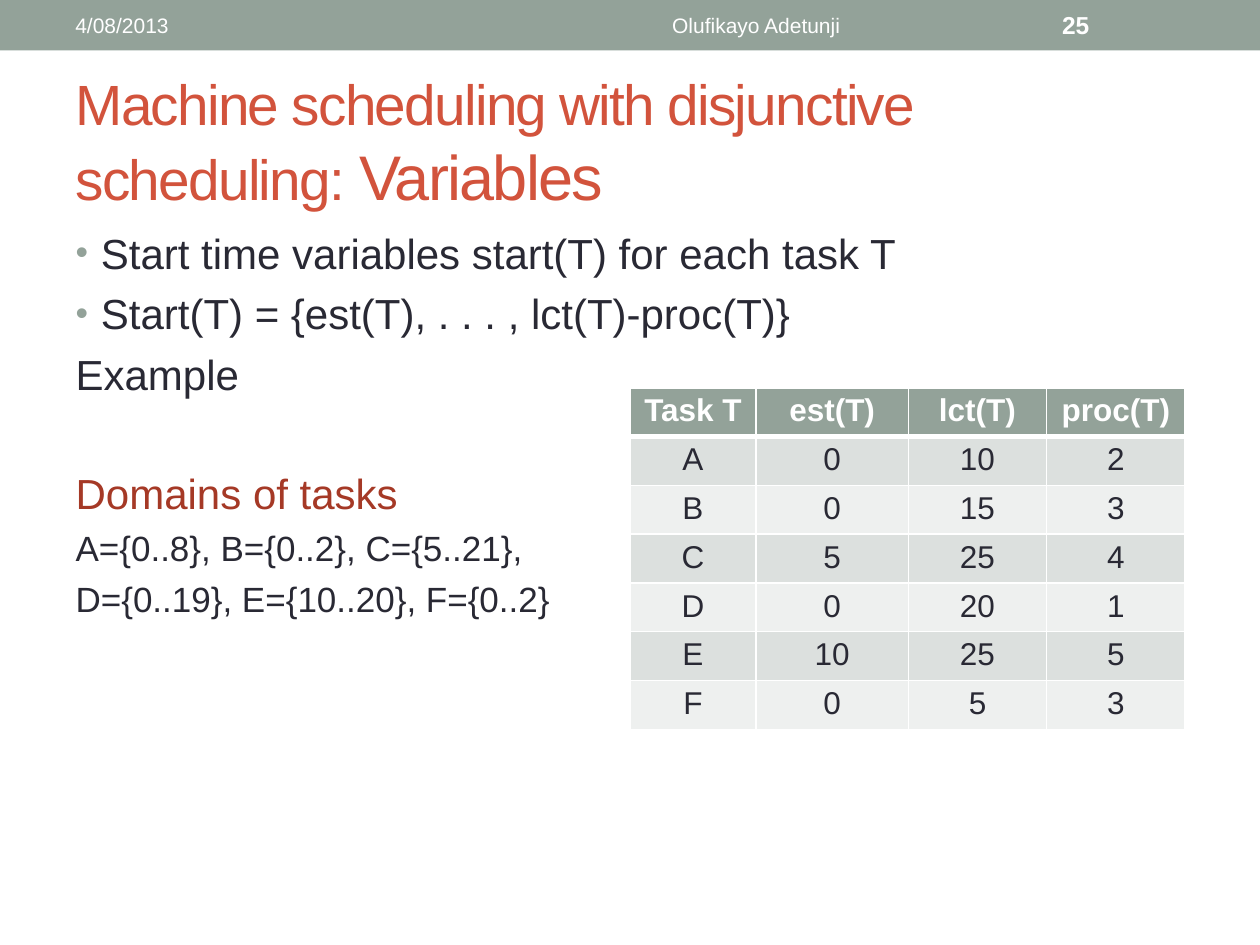
from dataclasses import dataclass
from typing import NamedTuple

from lxml.etree import SubElement
from pptx import Presentation
from pptx.dml.color import RGBColor
from pptx.enum.shapes import MSO_SHAPE
from pptx.enum.text import MSO_ANCHOR, MSO_AUTO_SIZE, PP_ALIGN
from pptx.oxml.ns import qn
from pptx.util import Cm, Pt


@dataclass(frozen=True)
class Theme:
    font: str = "Arial"
    sage: str = "93A299"
    title: str = "D2533C"
    accent: str = "A53926"
    ink: str = "292934"
    white: str = "FFFFFF"
    bands: tuple = ("DCE0DE", "EEF0EF")
    title_size: float = 32.4
    title_emphasis_size: float = 36
    body_size: float = 24
    domain_size: float = 20
    table_size: float = 18
    number_size: float = 14
    header_size: float = 12


class Box(NamedTuple):
    left: float
    top: float
    width: float
    height: float


class HeaderItem(NamedTuple):
    text: str
    box: Box
    size: float
    align: PP_ALIGN = PP_ALIGN.LEFT
    bold: bool = False


class BodyLine(NamedTuple):
    text: str
    size: float
    color: str
    space_before: float
    bullet: bool = False


THEME = Theme()
HEADER_ITEMS = (
    HeaderItem("4/08/2013", Box(1.27, 0.05, 8.05, 0.91), THEME.header_size),
    HeaderItem("Olufikayo Adetunji", Box(9.53, 0.05, 11.43, 0.91), THEME.header_size, PP_ALIGN.CENTER),
    HeaderItem("25", Box(21.16, 0.05, 2.97, 0.91), THEME.number_size, bold=True),
)
BODY_LINES = (
    BodyLine("Start time variables start(T) for each task T", THEME.body_size, THEME.ink, 6, True),
    BodyLine("Start(T) = {est(T), . . . , lct(T)-proc(T)}", THEME.body_size, THEME.ink, 6, True),
    BodyLine("Example", THEME.body_size, THEME.ink, 6),
    BodyLine("Domains of tasks", THEME.body_size, THEME.accent, 39),
    BodyLine("A={0..8}, B={0..2}, C={5..21},", THEME.domain_size, THEME.ink, 5),
    BodyLine("D={0..19}, E={10..20}, F={0..2}", THEME.domain_size, THEME.ink, 5),
)
TASK_ROWS = (
    ("Task T", "est(T)", "lct(T)", "proc(T)"),
    ("A", 0, 10, 2),
    ("B", 0, 15, 3),
    ("C", 5, 25, 4),
    ("D", 0, 20, 1),
    ("E", 10, 25, 5),
    ("F", 0, 5, 3),
)
COLUMN_WIDTHS = (2.54, 3.07, 2.79, 2.79)
ROW_HEIGHT = 0.96


def lengths(box: Box) -> tuple:
    return tuple(Cm(value) for value in box)


def place(shape, box: Box) -> None:
    shape.left, shape.top, shape.width, shape.height = lengths(box)


def add_text(paragraph, text: str, *, size: float, color: str, bold: bool = False,
             align: PP_ALIGN = PP_ALIGN.LEFT, spacing: int = 0) -> None:
    paragraph.alignment = align
    run = paragraph.add_run()
    run.text = text
    run.font.name = THEME.font
    run.font.size = Pt(size)
    run.font.bold = bold
    run.font.color.rgb = RGBColor.from_string(color)
    if spacing:
        run.font._element.set("spc", str(spacing))


def set_bullet(paragraph, bullet: bool) -> None:
    properties = paragraph._p.get_or_add_pPr()
    indent = Cm(0.51) if bullet else 0
    properties.set("marL", str(indent))
    properties.set("indent", str(-indent))
    if not bullet:
        SubElement(properties, qn("a:buNone"))
        return
    color = SubElement(properties, qn("a:buClr"))
    SubElement(color, qn("a:srgbClr"), val=THEME.sage)
    SubElement(properties, qn("a:buSzPct"), val="85000")
    SubElement(properties, qn("a:buFont"), typeface=THEME.font)
    SubElement(properties, qn("a:buChar"), char="•")


def set_border(cell, side: str, width: float) -> None:
    line = SubElement(cell._tc.get_or_add_tcPr(), qn(f"a:{side}"), w=str(Pt(width)))
    fill = SubElement(line, qn("a:solidFill"))
    SubElement(fill, qn("a:srgbClr"), val=THEME.white)


def add_header(slide) -> None:
    band = slide.shapes.add_shape(MSO_SHAPE.RECTANGLE, *lengths(Box(0, 0, 25.4, 1.02)))
    band.shadow.inherit = False
    band.fill.solid()
    band.fill.fore_color.rgb = RGBColor.from_string(THEME.sage)
    band.line.fill.background()
    for item in HEADER_ITEMS:
        frame = slide.shapes.add_textbox(*lengths(item.box)).text_frame
        frame.word_wrap = True
        frame.vertical_anchor = MSO_ANCHOR.MIDDLE
        add_text(frame.paragraphs[0], item.text, size=item.size, color=THEME.white,
                 bold=item.bold, align=item.align)


def fill_title(title) -> None:
    place(title, Box(1.27, 1.47, 22.86, 2.74))
    frame = title.text_frame
    frame.auto_size = MSO_AUTO_SIZE.NONE
    frame.vertical_anchor = MSO_ANCHOR.MIDDLE
    for text, size in (
        ("Machine scheduling with disjunctive scheduling: ", THEME.title_size),
        ("Variables", THEME.title_emphasis_size),
    ):
        add_text(frame.paragraphs[0], text, size=size, color=THEME.title, spacing=-100)


def fill_body(body) -> None:
    place(body, Box(1.27, 4.45, 22.86, 13.54))
    frame = body.text_frame
    frame.auto_size = MSO_AUTO_SIZE.NONE
    for index, line in enumerate(BODY_LINES):
        paragraph = frame.add_paragraph() if index else frame.paragraphs[0]
        paragraph.space_before = Pt(line.space_before)
        set_bullet(paragraph, line.bullet)
        add_text(paragraph, line.text, size=line.size, color=line.color)


def add_task_table(slide) -> None:
    box = Box(12.7, 7.82, sum(COLUMN_WIDTHS), ROW_HEIGHT * len(TASK_ROWS))
    table = slide.shapes.add_table(len(TASK_ROWS), len(COLUMN_WIDTHS), *lengths(box)).table
    for column, width in zip(table.columns, COLUMN_WIDTHS):
        column.width = Cm(width)
    for row_index, values in enumerate(TASK_ROWS):
        table.rows[row_index].height = Cm(ROW_HEIGHT)
        header = row_index == 0
        fill_color = THEME.sage if header else THEME.bands[(row_index - 1) % 2]
        for column_index, value in enumerate(values):
            cell = table.cell(row_index, column_index)
            cell.margin_top = cell.margin_bottom = Cm(0.11)
            for side in ("lnL", "lnR", "lnT", "lnB"):
                thick = (side, row_index) in (("lnB", 0), ("lnT", 1))
                set_border(cell, side, 3 if thick else 1)
            cell.fill.solid()
            cell.fill.fore_color.rgb = RGBColor.from_string(fill_color)
            add_text(cell.text_frame.paragraphs[0], str(value), size=THEME.table_size,
                     color=THEME.white if header else THEME.ink, bold=header,
                     align=PP_ALIGN.CENTER)


def main() -> None:
    """Build the machine scheduling slide and save it."""
    presentation = Presentation()
    presentation.slide_width, presentation.slide_height = Cm(25.4), Cm(19.05)
    slide = presentation.slides.add_slide(presentation.slide_layouts[1])
    add_header(slide)
    fill_title(slide.shapes.title)
    fill_body(slide.placeholders[1])
    add_task_table(slide)
    presentation.save("out.pptx")


if __name__ == "__main__":
    main()
